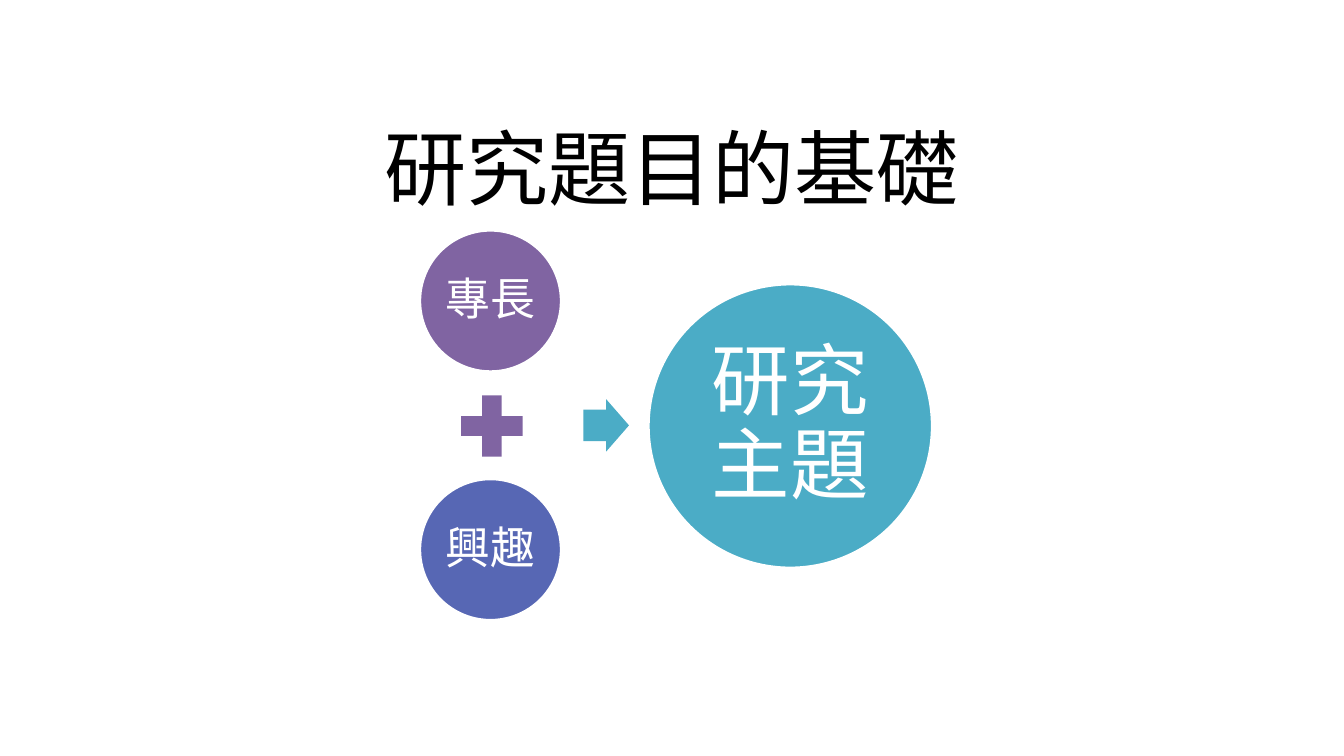
"""Build a slide showing the basis of a research topic."""
from lxml.etree import SubElement
from pptx import Presentation
from pptx.dml.color import RGBColor
from pptx.enum.shapes import MSO_SHAPE
from pptx.enum.text import MSO_ANCHOR, PP_ALIGN
from pptx.oxml.ns import qn
from pptx.util import Inches, Pt

FONT = "Noto Sans CJK JP"
WHITE, PURPLE, BLUE, TEAL = "FFFFFF", "8064A2", "5767B4", "4BACC6"


def paint(color, tone):
    color.rgb = RGBColor.from_string(tone)


def write(shapes, words, box, size, tone, inset):
    frame = shapes.add_textbox(*map(Inches, box)).text_frame
    frame.word_wrap = True
    frame.vertical_anchor = MSO_ANCHOR.MIDDLE
    frame.margin_left = frame.margin_right = Inches(inset[0])
    frame.margin_top = frame.margin_bottom = Inches(inset[1])
    para = frame.paragraphs[0]
    para.alignment = PP_ALIGN.CENTER
    run = para.add_run()
    run.text = words
    run.font.size = Pt(size)
    run.font.name = FONT
    paint(run.font.color, tone)
    SubElement(run.font._element, qn("a:ea")).set("typeface", FONT)
    return para


deck = Presentation()
deck.slide_width = Inches(10)
deck.slide_height = Inches(10 * 9 / 16)
slide = deck.slides.add_slide(deck.slide_layouts[6])
write(slide.shapes, "研究題目的基礎", (0.5, 0.77, 9, 0.94), 44, "000000", (0.1, 0.05))

group = slide.shapes.add_group_shape().shapes
circles = [
    ("專長", 3.12, 1.71, 1.06, 0.75, 24, PURPLE, 0.03),
    ("興趣", 3.12, 3.56, 1.06, 0.75, 24, BLUE, 0.03),
    ("研究主題", 4.82, 2.11, 2.12, 1.5, 42, TEAL, 0.06),
]
for words, left, top, width, inner, size, tone, inset in circles:
    disc = group.add_shape(MSO_SHAPE.OVAL, *map(Inches, (left, top, width, width)))
    disc.shadow.inherit = False
    disc.fill.solid()
    paint(disc.fill.fore_color, tone)
    paint(disc.line.color, WHITE)
    disc.line.width = Pt(2)
    gap = (width - inner) / 2
    box = (left + gap, top + gap, inner, inner)
    para = write(group, words, box, size, WHITE, (inset, inset))
    para.line_spacing = 0.9
    para.space_after = Pt(size * 0.35)

signs = [
    (MSO_SHAPE.MATH_PLUS, (3.35, 2.86, 0.62, 0.62), PURPLE),
    (MSO_SHAPE.RIGHT_ARROW, (4.34, 2.97, 0.34, 0.39), TEAL),
]
for kind, box, tone in signs:
    sign = group.add_shape(kind, *map(Inches, box))
    sign.shadow.inherit = False
    sign.fill.solid()
    paint(sign.fill.fore_color, tone)
    sign.line.fill.background()
sign.adjustments[0] = 0.6

deck.save("out.pptx")
